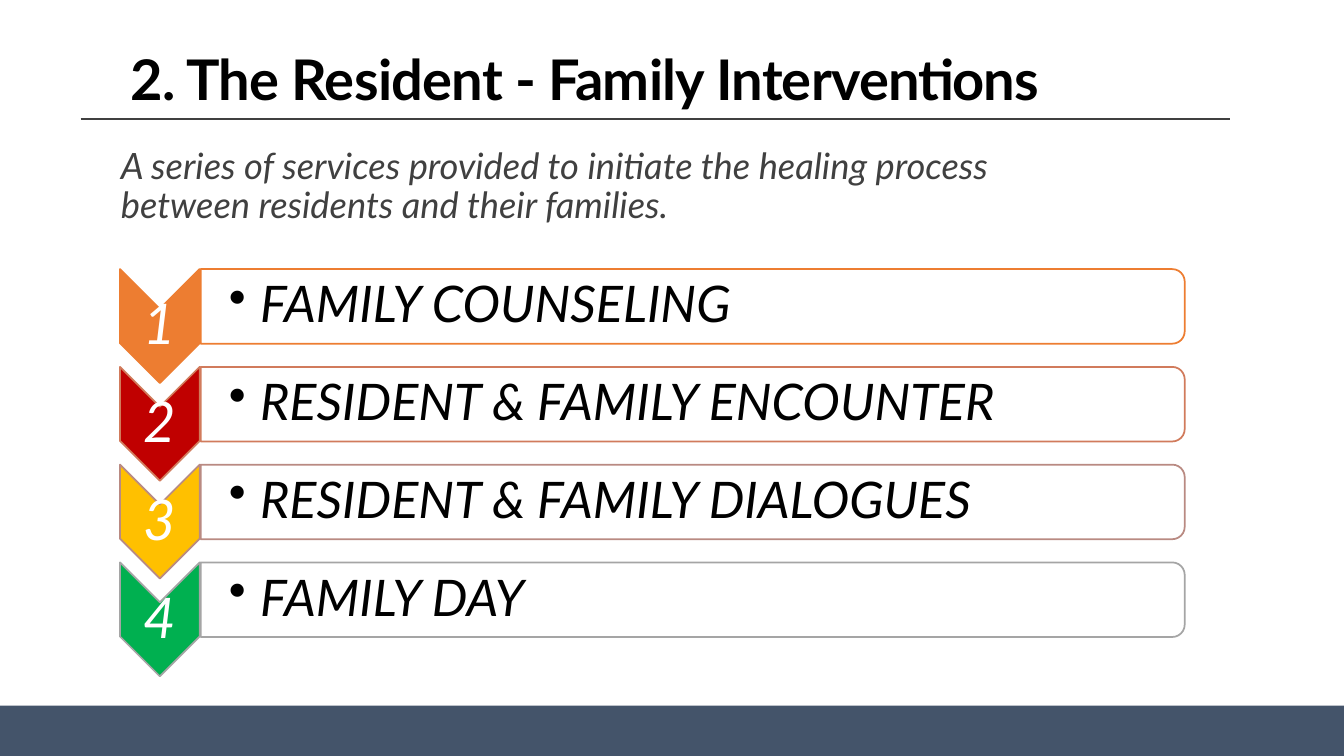
from lxml import etree
from pptx import Presentation
from pptx.dml.color import RGBColor
from pptx.enum.shapes import MSO_CONNECTOR, MSO_SHAPE
from pptx.enum.text import MSO_ANCHOR as Anchor, PP_ALIGN as Align
from pptx.oxml.ns import qn
from pptx.util import Inches, Pt

COLORS = {
    "black": "000000", "white": "FFFFFF", "gray": "404040", "slate": "44546A",
    "orange": "ED7D31", "red": "C00000", "yellow": "FFC000", "green": "00B050",
    "coral": "D17B5C", "rose": "B98A82", "silver": "A5A5A5",
}


def rgb(name):
    return RGBColor.from_string(COLORS[name])


def add_text(page, text, place, size, color, insets, anchor):
    box = page.shapes.add_textbox(*map(Inches, place))
    frame = box.text_frame
    frame.word_wrap = True
    frame.vertical_anchor = anchor
    (frame.margin_left, frame.margin_top,
     frame.margin_right, frame.margin_bottom) = map(Inches, insets)
    para = frame.paragraphs[0]
    para.text = text
    para.line_spacing = 0.9
    para.font.name = "Lato"
    para.font.size = Pt(size)
    para.font.color.rgb = rgb(color)
    return para


deck = Presentation()
deck.slide_width, deck.slide_height = Inches(13.33), Inches(7.5)
page = deck.slides.add_slide(deck.slide_layouts[6])

# Footer band and title rule
band = page.shapes.add_shape(
    MSO_SHAPE.RECTANGLE, 0, Inches(7), deck.slide_width, Inches(0.5))
band.shadow.inherit = False
band.fill.solid()
band.fill.fore_color.rgb = rgb("slate")
band.line.fill.background()

rule = page.shapes.add_connector(
    MSO_CONNECTOR.STRAIGHT, Inches(0.8), Inches(1.18), Inches(12.2), Inches(1.18))
rule.line.color.rgb = rgb("gray")
rule.line.width = Pt(1)
etree.SubElement(rule.element.spPr, qn("a:effectLst"))

# Title and introduction
title = add_text(page, "2. The Resident - Family Interventions", (1.2, 0.31, 11, 0.86),
                 40, "black", (0.1, 0.05, 0.1, 0.05), Anchor.BOTTOM)
title.font.bold = True
title._p.pPr.find(qn("a:defRPr")).set("spc", "-50")

intro = add_text(page, "A series of services provided to initiate the healing process\v"
                 "between residents and their families.", (1.2, 1.42, 11, 0.92),
                 25.9, "gray", (0, 0.05, 0, 0.05), Anchor.TOP)
intro.font.italic = True
intro.space_before, intro.space_after = Pt(12), Pt(2)

# Numbered interventions: label, chevron fill, outline, bar fill
interventions = [
    ("FAMILY COUNSELING", "orange", "orange", "white"),
    ("RESIDENT & FAMILY ENCOUNTER", "red", "coral", "white"),
    ("RESIDENT & FAMILY DIALOGUES", "yellow", "rose", None),
    ("FAMILY DAY", "green", "silver", "white"),
]
ROW_STEP = 0.97

for index, (label, chevron_fill, outline, bar_fill) in enumerate(interventions):
    shift = index * ROW_STEP

    # Shapes turned a quarter clockwise
    chevron = page.shapes.add_shape(
        MSO_SHAPE.CHEVRON, Inches(1.02), Inches(2.84 + shift), Inches(1.13), Inches(0.79))
    bar = page.shapes.add_shape(
        MSO_SHAPE.ROUND_2_SAME_RECTANGLE,
        Inches(6.5), Inches(-1.84 + shift), Inches(0.74), Inches(9.76))
    for shape, fill in ((chevron, chevron_fill), (bar, bar_fill)):
        shape.rotation = 90
        shape.shadow.inherit = False
        shape.line.color.rgb = rgb(outline)
        shape.line.width = Pt(1.25)
        if fill:
            shape.fill.solid()
            shape.fill.fore_color.rgb = rgb(fill)
        else:
            shape.fill.background()
    if bar_fill:
        white = bar.element.spPr.find(qn("a:solidFill")).find(qn("a:srgbClr"))
        etree.SubElement(white, qn("a:alpha"), val="90000")

    # Number and bulleted label
    number = add_text(page, str(index + 1), (1.19, 3.07 + shift, 0.79, 0.34),
                      40, "white", (0.03,) * 4, Anchor.MIDDLE)
    number.alignment = Align.CENTER
    number.font.italic = True

    item = add_text(page, label, (1.99, 2.71 + shift, 9.73, 0.66),
                    36, "black", (0.28, 0.03, 0.03, 0.03), Anchor.MIDDLE)
    item.font.italic = True
    props = item._p.pPr
    props.set("marL", str(Inches(0.31)))
    props.set("indent", str(Inches(-0.31)))
    bullet = etree.Element(qn("a:buChar"), char="•")
    props.find(qn("a:defRPr")).addprevious(bullet)

deck.save("out.pptx")
